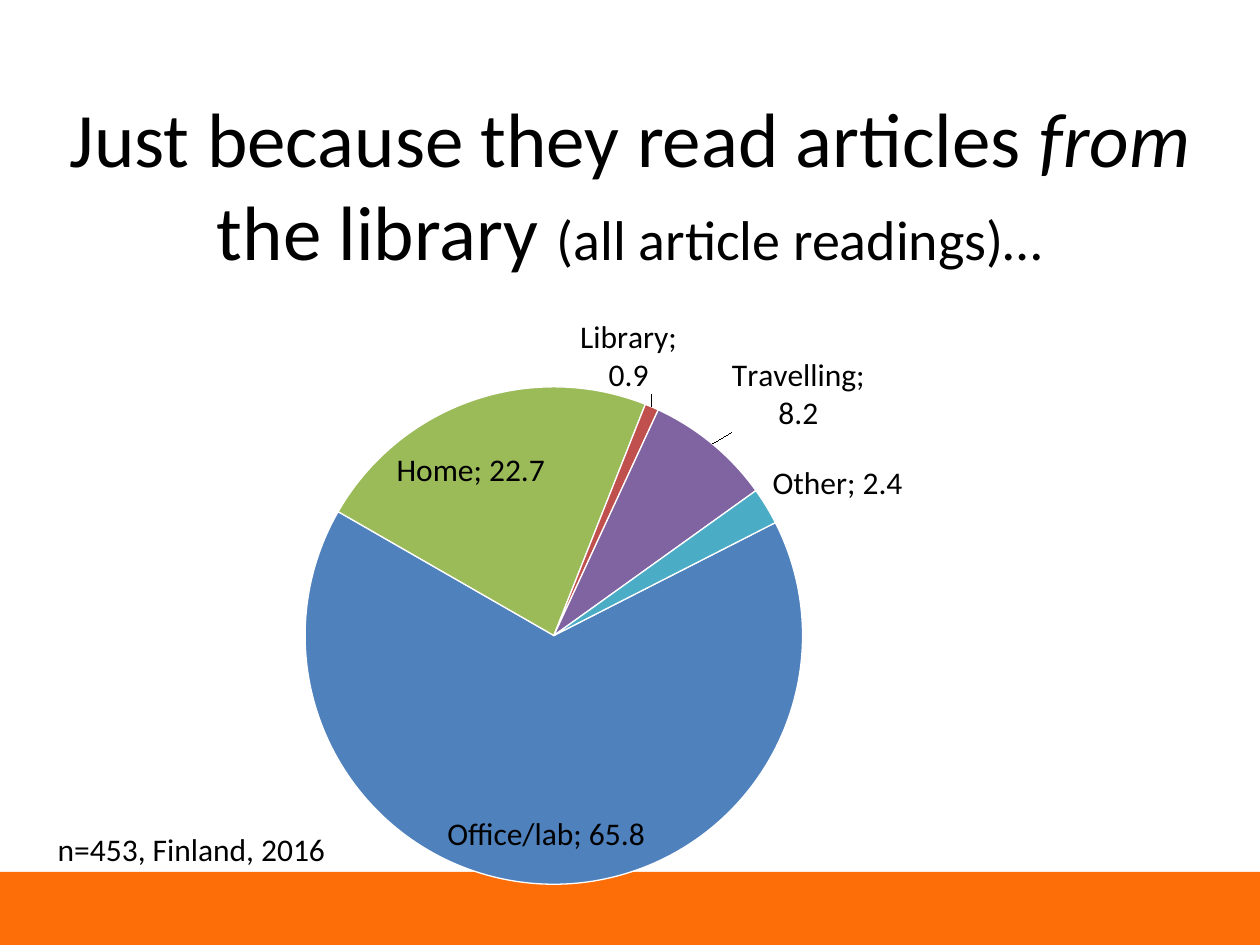
"""Build a slide with a pie chart of where article readings take place."""
from dataclasses import dataclass

from lxml import etree
from pptx import Presentation
from pptx import util as u
from pptx.chart import data
from pptx.dml import color
from pptx.enum import chart as ch
from pptx.enum import shapes, text
from pptx.oxml import ns


@dataclass(frozen=True)
class Theme:
    """Hold the colours, font and type sizes."""
    face: str = "Calibri"
    ink: str = "000000"
    band: str = "FD6D08"
    edge: str = "FFFFFF"
    head: int = 44
    sub: int = 32
    body: int = 18


THEME = Theme()
FIT, OUT = ch.XL_LABEL_POSITION.BEST_FIT, ch.XL_LABEL_POSITION.OUTSIDE_END
PLOT = {"x": 0.105, "y": 0.153, "w": 0.667, "h": 0.816}
TURN = 63
PLACES = [
    ("Office/lab", 65.8, "4F81BD", FIT, "; ", None),
    ("Home", 22.7, "9BBB59", FIT, "; ", None),
    ("Library", 0.9, "C0504D", OUT, ";\n", {"x": -0.1, "y": -0.01}),
    ("Travelling", 8.2, "8064A2", OUT, ";\n", {"x": 0.02, "y": -0.01}),
    ("Other", 2.4, "4BACC6", OUT, "; ", None),
]


def box(*sides):
    """Turn numbers into lengths."""
    return [u.Inches(side) for side in sides]


def put(item, vals):
    """Set each named attribute on an item."""
    for name, val in vals.items():
        setattr(item, name, val)


def style(font, size, **more):
    """Format a font from the theme."""
    put(font, {"name": THEME.face, "size": u.Pt(size), **more})
    font.color.rgb = color.RGBColor.from_string(THEME.ink)


def paint(fill, tint):
    """Give a fill one solid colour."""
    fill.solid()
    fill.fore_color.rgb = color.RGBColor.from_string(tint)


def write(para, runs):
    """Add runs of words, size and slant to a paragraph."""
    for words, size, slant in runs:
        run = para.add_run()
        run.text = words
        style(run.font, size, italic=slant)


def add_title(slide):
    """Fill the title placeholder."""
    title = slide.shapes.title
    put(title, dict(zip(("left", "top", "width", "height"), box(0, 0.67, 10, 1.25))))
    put(title.text_frame, {"word_wrap": True, "auto_size": text.MSO_AUTO_SIZE.NONE,
                           "vertical_anchor": text.MSO_ANCHOR.TOP})
    para = title.text_frame.paragraphs[0]
    para.alignment = text.PP_ALIGN.CENTER
    write(para, [("Just because they read articles ", THEME.head, False),
                 ("from ", THEME.head, True),
                 ("the library ", THEME.head, False),
                 ("(all article readings)…", THEME.sub, False)])


def add_band(slide):
    """Draw the band along the foot of the slide."""
    band = slide.shapes.add_shape(shapes.MSO_SHAPE.RECTANGLE, *box(0, 6.92, 10, 0.58))
    band.shadow.inherit = False
    paint(band.fill, THEME.band)
    band.line.fill.background()


def add_note(slide):
    """Write the sample note."""
    frame = slide.shapes.add_textbox(*box(0.36, 6.54, 2.72, 0.4)).text_frame
    put(frame, {"word_wrap": True, "auto_size": text.MSO_AUTO_SIZE.SHAPE_TO_FIT_TEXT})
    write(frame.paragraphs[0], [("n=453, Finland, 2016", THEME.body, False)])


def make(tag, **vals):
    """Make a chart element with attributes."""
    return etree.Element(ns.qn("c:" + tag), vals)


def layout(spots, modes=()):
    """Make a manual layout from fractions of the chart."""
    root = make("layout")
    hand = make("manualLayout")
    root.append(hand)
    for tag, val in [*modes, *spots.items()]:
        hand.append(make(tag, val=str(val)))
    return root


def add_label(point, spot, gap, shift):
    """Label a slice with its name and value."""
    label = point.data_label
    style(label.font, THEME.body)
    label.position = spot
    node = label._get_or_add_dLbl()
    node.find(ns.qn("c:showCatName")).set("val", "1")
    mark = make("separator")
    mark.text = gap
    node.find(ns.qn("c:showBubbleSize")).addnext(mark)
    if shift:
        node.find(ns.qn("c:idx")).addnext(layout(shift))


def add_pie(slide):
    """Chart the share of readings by place."""
    stats = data.CategoryChartData()
    stats.categories = [place[0] for place in PLACES]
    stats.add_series("Series 1", [place[1] for place in PLACES])
    chart = slide.shapes.add_chart(ch.XL_CHART_TYPE.PIE, *box(1.8, 2.33, 5.92, 4.84), stats).chart
    put(chart, {"has_legend": False, "has_title": False})
    style(chart.font, THEME.body)
    plot = chart.plots[0]
    put(plot, {"vary_by_categories": True, "has_data_labels": True})
    put(plot.data_labels, {"show_value": True, "show_category_name": True})
    style(plot.data_labels.font, THEME.body)
    for num, (_, _, tint, spot, gap, shift) in enumerate(PLACES):
        point = plot.series[0].points[num]
        paint(point.format.fill, tint)
        paint(point.format.line.fill, THEME.edge)
        point.format.line.width = u.Pt(0.75)
        add_label(point, spot, gap, shift)
    area = chart._chartSpace.chart.plotArea
    for old in area.findall(ns.qn("c:layout")):
        area.remove(old)
    modes = [("layoutTarget", "inner"), ("xMode", "edge"), ("yMode", "edge")]
    area.insert(0, layout(PLOT, modes))
    pie = area.find(ns.qn("c:pieChart"))
    for old in pie.findall(ns.qn("c:firstSliceAng")):
        pie.remove(old)
    pie.append(make("firstSliceAng", val=str(TURN)))


def main():
    """Build and save the slide."""
    deck = Presentation()
    put(deck, {"slide_width": u.Inches(10), "slide_height": u.Inches(7.5)})
    slide = deck.slides.add_slide(deck.slide_layouts[5])
    add_band(slide)
    add_title(slide)
    add_pie(slide)
    add_note(slide)
    deck.save("out.pptx")


if __name__ == "__main__":
    main()
